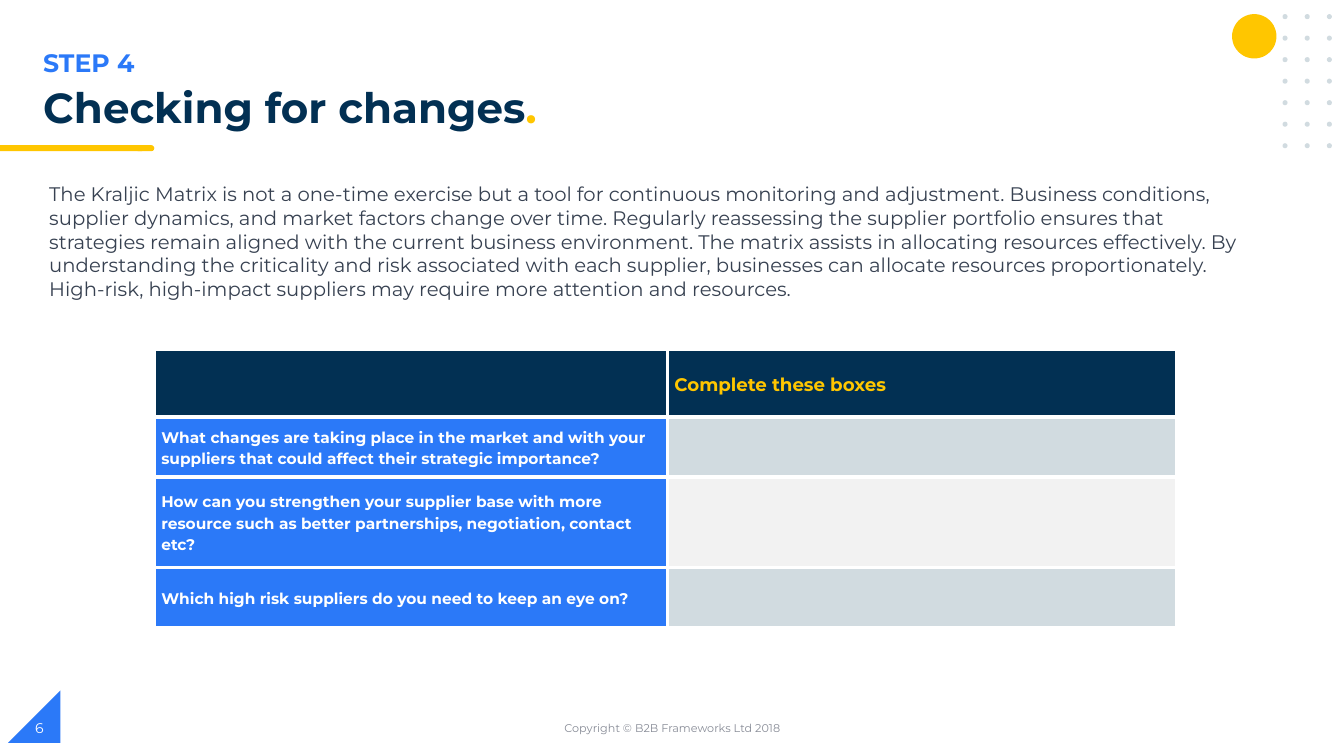
import pptx
import pptx.dml.color
import pptx.enum.shapes
import pptx.enum.text
import pptx.oxml
import pptx.oxml.ns
import pptx.util

Inches = pptx.util.Inches
Pt = pptx.util.Pt
SHAPES = pptx.enum.shapes.MSO_SHAPE
ALIGN = pptx.enum.text.PP_ALIGN
ANCHOR = pptx.enum.text.MSO_ANCHOR
FONT = "Montserrat"
COLOURS = {
    "navy": "023053",
    "blue": "2B79F8",
    "yellow": "FFC600",
    "mist": "D1DBE0",
    "pale": "F2F2F2",
    "white": "FFFFFF",
    "body": "374151",
    "footer": "888C97",
}
BODY = (
    "The Kraljic Matrix is not a one-time exercise but a tool for continuous monitoring "
    "and adjustment. Business conditions, supplier dynamics, and market factors change "
    "over time. Regularly reassessing the supplier portfolio ensures that strategies "
    "remain aligned with the current business environment. The matrix assists in "
    "allocating resources effectively. By understanding the criticality and risk "
    "associated with each supplier, businesses can allocate resources proportionately. "
    "High-risk, high-impact suppliers may require more attention and resources."
)
QUESTIONS = [
    "What changes are taking place in the market and with your suppliers that could "
    "affect their strategic importance?",
    "How can you strengthen your supplier base with more resource such as better "
    "partnerships, negotiation, contact etc?",
    "Which high risk suppliers do you need to keep an eye on?",
]


def colour(name):
    """Return the named palette colour."""
    return pptx.dml.color.RGBColor.from_string(COLOURS[name])


def style_run(run, size, name, bold=False):
    """Set the font, size, colour and weight of a run."""
    run.font.name = FONT
    run.font.size = Pt(size)
    run.font.bold = bold
    run.font.color.rgb = colour(name)


def add_mark(page, kind, box, name):
    """Draw a plain filled shape without outline."""
    mark = page.shapes.add_shape(kind, *map(Inches, box))
    mark.shadow.inherit = False
    mark.fill.solid()
    mark.fill.fore_color.rgb = colour(name)
    mark.line.fill.background()
    return mark


def add_text(page, box, spans, size, bold=False, align=ALIGN.LEFT, anchor=ANCHOR.TOP):
    """Place one paragraph of (text, colour) spans and return it."""
    frame = page.shapes.add_textbox(*map(Inches, box)).text_frame
    frame.word_wrap = True
    frame.vertical_anchor = anchor
    para = frame.paragraphs[0]
    para.alignment = align
    for text, name in spans:
        run = para.add_run()
        run.text = text
        style_run(run, size, name, bold)
    return para


def add_corner(page, left, top):
    """Draw the yellow disc and the grid of dots beside it."""
    add_mark(page, SHAPES.OVAL, (left, top, 0.44, 0.44), "yellow")
    for row in range(7):
        for column in range(3):
            dot = (left + 0.5 + column * 0.22, top + row * 0.2135, 0.05, 0.05)
            add_mark(page, SHAPES.OVAL, dot, "mist")


def add_heading(page, left, top):
    """Write the step label and title above the yellow underline."""
    add_text(page, (left, top, 6.69, 0.4), [("STEP 4", "blue")], 18, True)
    title = [("Checking for changes", "navy"), (".", "yellow")]
    para = add_text(page, (left, top + 0.4, 12.08, 0.56), title, 30, True)
    para.line_spacing = 0.9
    underline = top + 1.02
    add_mark(page, SHAPES.FLOWCHART_TERMINATOR, (1.34, underline, 0.19, 0.06), "yellow")
    add_mark(page, SHAPES.RECTANGLE, (0, underline, 1.41, 0.06), "yellow")


def add_footer(page, top):
    """Draw the corner triangle, page number and copyright line."""
    triangle = add_mark(page, SHAPES.RIGHT_TRIANGLE, (0.08, top, 0.52, 0.52), "blue")
    triangle.element.spPr.xfrm.set("flipH", "1")
    line = top + 0.17
    add_text(page, (4.42, line, 4.5, 0.4), [("Copyright © B2B Frameworks Ltd 2018", "footer")],
             8, align=ALIGN.CENTER, anchor=ANCHOR.MIDDLE)
    add_text(page, (0.25, line, 3, 0.4), [("6", "white")], 10, anchor=ANCHOR.MIDDLE)


def add_borders(cell):
    """Give a cell white borders on all sides, ahead of its fill."""
    properties = cell._tc.get_or_add_tcPr()
    for index, side in enumerate(("lnL", "lnR", "lnT", "lnB")):
        properties.insert(index, pptx.oxml.parse_xml(
            f'<a:{side} {pptx.oxml.ns.nsdecls("a")} w="{Pt(3)}"><a:solidFill>'
            f'<a:srgbClr val="{COLOURS["white"]}"/></a:solidFill></a:{side}>'))


def fill_cell(cell, text, fill, size, name):
    """Fill a table cell and write its text."""
    cell.fill.solid()
    cell.fill.fore_color.rgb = colour(fill)
    add_borders(cell)
    cell.margin_left = cell.margin_right = Inches(0.07)
    cell.margin_top = cell.margin_bottom = 0
    cell.vertical_anchor = ANCHOR.MIDDLE
    if text:
        para = cell.text_frame.paragraphs[0]
        para.text = text
        para.line_spacing = 1.15
        style_run(para.runs[0], size, name, True)


def add_questions(page, left, top):
    """Build the table of questions with boxes to complete."""
    widths, heights = (5.09, 5.05), (0.68, 0.59, 0.9, 0.6)
    frame = page.shapes.add_table(len(heights), len(widths), Inches(left), Inches(top),
                                  Inches(sum(widths)), Inches(sum(heights)))
    table = frame.table
    for column, width in zip(table.columns, widths):
        column.width = Inches(width)
    for row, height in zip(table.rows, heights):
        row.height = Inches(height)
    fill_cell(table.cell(0, 0), "", "navy", 13, "yellow")
    fill_cell(table.cell(0, 1), "Complete these boxes", "navy", 13, "yellow")
    for index, question in enumerate(QUESTIONS, 1):
        fill_cell(table.cell(index, 0), question, "blue", 11, "white")
        fill_cell(table.cell(index, 1), "", "mist" if index % 2 else "pale", 11, "navy")


def main():
    """Build the slide and save the deck."""
    deck = pptx.Presentation()
    deck.slide_width, deck.slide_height = Inches(13.33), Inches(7.5)
    page = deck.slides.add_slide(deck.slide_layouts[6])
    add_corner(page, 12.22, 0.14)
    add_heading(page, 0.33, 0.42)
    add_text(page, (0.39, 1.76, 12.2, 1.28), [(BODY, "body")], 14)
    add_questions(page, 1.53, 3.46)
    add_footer(page, 6.85)
    deck.save("out.pptx")


if __name__ == "__main__":
    main()
